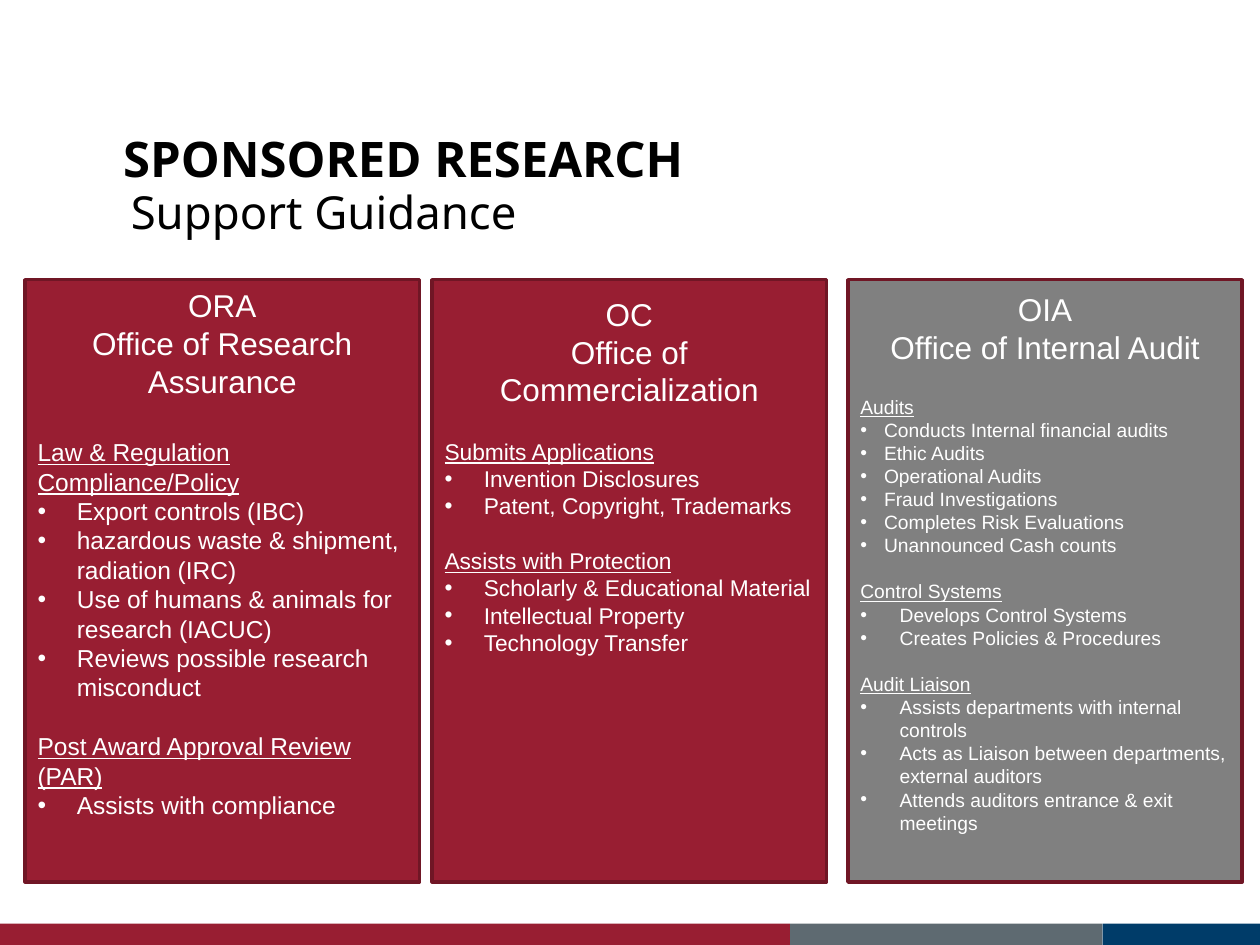
from dataclasses import dataclass

from lxml.etree import SubElement
from pptx import Presentation
from pptx.dml.color import RGBColor as Color
from pptx.enum.shapes import MSO_SHAPE as Preset
from pptx.enum.text import MSO_ANCHOR as Anchor, PP_ALIGN as Align
from pptx.oxml.ns import qn
from pptx.util import Inches, Pt

COLUMN = ROW = Inches(10) // 100


@dataclass(frozen=True)
class Theme:
    """Colours, fonts and type sizes of the slide."""
    crimson: str = "981E32"
    border: str = "701625"
    gray: str = "808080"
    slate: str = "5E6A71"
    navy: str = "003C69"
    black: str = "000000"
    white: str = "FFFFFF"
    heading_font: str = "Noto Sans"
    body_font: str = "Arial"
    title_size: int = 28
    subtitle_size: int = 26
    header_size: int = 18
    leading: float = 1.2


@dataclass(frozen=True)
class Box:
    """A rectangle in columns and rows of the slide grid."""
    left: float
    top: float
    width: float
    height: float

    def lengths(self):
        """Return the rectangle in slide lengths."""
        return (round(self.left * COLUMN), round(self.top * ROW),
                round(self.width * COLUMN), round(self.height * ROW))


@dataclass(frozen=True)
class Office:
    """Content and type settings of one office panel."""
    header: tuple
    sections: tuple
    fill: str
    size: int
    inset: float
    gap: int


THEME = Theme()
WIDE, NARROW = 3.12, 1.88

OFFICES = (
    Office(("ORA", "Office of Research Assurance"), (
        ("Law & Regulation Compliance/Policy", WIDE, (
            "Export controls (IBC)",
            "hazardous waste & shipment, radiation (IRC)",
            "Use of humans & animals for research (IACUC)",
            "Reviews possible research misconduct")),
        ("Post Award Approval Review (PAR)", WIDE, ("Assists with compliance",)),
    ), THEME.crimson, 14, 0.5, 18),
    Office(("OC", "Office of Commercialization"), (
        ("Submits Applications", WIDE, (
            "Invention Disclosures",
            "Patent, Copyright, Trademarks")),
        ("Assists with Protection", WIDE, (
            "Scholarly & Educational Material",
            "Intellectual Property",
            "Technology Transfer")),
    ), THEME.crimson, 13, 1.2, 14),
    Office(("OIA", "Office of Internal Audit"), (
        ("Audits", NARROW, (
            "Conducts Internal financial audits",
            "Ethic Audits",
            "Operational Audits",
            "Fraud Investigations",
            "Completes Risk Evaluations",
            "Unannounced Cash counts")),
        ("Control Systems", WIDE, (
            "Develops Control Systems",
            "Creates Policies & Procedures")),
        ("Audit Liaison", WIDE, (
            "Assists departments with internal controls",
            "Acts as Liaison between departments, external auditors",
            "Attends auditors entrance & exit meetings")),
    ), THEME.gray, 11, 0.8, 14),
)


def add_run(paragraph, text, size, font, color, bold=False, underline=False):
    """Add one styled run to a paragraph."""
    run = paragraph.add_run()
    run.text = text
    run.font.size, run.font.name = Pt(size), font
    run.font.bold, run.font.underline = bold, underline
    run.font.color.rgb = Color.from_string(color)


def add_rectangle(slide, box, fill):
    """Add a flat, borderless rectangle."""
    shape = slide.shapes.add_shape(Preset.RECTANGLE, *box.lengths())
    shape.shadow.inherit = False
    shape.fill.solid()
    shape.fill.fore_color.rgb = Color.from_string(fill)
    shape.line.fill.background()
    return shape


def indent(paragraph, columns, bullet=False):
    """Indent a paragraph, hanging a bullet in the indent if wanted."""
    properties = paragraph._p.get_or_add_pPr()
    length = round(columns * COLUMN)
    properties.set("marL", str(length))
    if bullet:
        properties.set("indent", str(-length))
        SubElement(properties, qn("a:buFont"), typeface=THEME.body_font)
        SubElement(properties, qn("a:buChar"), char="•")


def add_footer(slide, box):
    """Place the three-colour band along the box."""
    left = box.left
    for share, fill in ((0.627, THEME.crimson), (0.248, THEME.slate), (0.125, THEME.navy)):
        width = share * box.width
        add_rectangle(slide, Box(left, box.top, width, box.height), fill)
        left += width


def add_heading(slide, box):
    """Place the title in the upper part of the box and the subtitle below it."""
    title_box = Box(box.left + 1.2, box.top, box.width, 5.3)
    subtitle_box = Box(box.left, box.top + 4.2, box.width, box.height - 4.2)
    lines = (
        (title_box, "SPONSORED RESEARCH", THEME.title_size, True, Anchor.BOTTOM, 0.9, 0),
        (subtitle_box, "Support Guidance", THEME.subtitle_size, False, Anchor.TOP, 1.0, 1.8),
    )
    for place, text, size, bold, anchor, spacing, margin in lines:
        frame = slide.shapes.add_textbox(*place.lengths()).text_frame
        frame.word_wrap, frame.vertical_anchor = True, anchor
        frame.margin_bottom = round(0.3 * ROW)
        paragraph = frame.paragraphs[0]
        paragraph.line_spacing = spacing
        indent(paragraph, margin)
        add_run(paragraph, text, size, THEME.heading_font, THEME.black, bold)


def add_office(slide, box, office):
    """Place one office panel with its header and bulleted sections."""
    shape = add_rectangle(slide, box, office.fill)
    shape.line.color.rgb = Color.from_string(THEME.border)
    shape.line.width = Pt(2)
    frame = shape.text_frame
    frame.word_wrap, frame.vertical_anchor = True, Anchor.TOP
    frame.margin_top = round(office.inset * ROW)
    unused = [frame.paragraphs[0]]

    def add_line(text, size, align=Align.LEFT, before=0, underline=False):
        """Add one paragraph with fixed leading."""
        paragraph = unused.pop() if unused else frame.add_paragraph()
        paragraph.alignment = align
        paragraph.line_spacing = Pt(THEME.leading * size)
        paragraph.space_before = Pt(THEME.leading * before)
        add_run(paragraph, text, size, THEME.body_font, THEME.white, underline=underline)
        return paragraph

    for text in office.header:
        add_line(text, THEME.header_size, Align.CENTER)
    for number, (heading, hanging, items) in enumerate(office.sections):
        before = office.size if number else office.gap
        add_line(heading, office.size, before=before, underline=True)
        for item in items:
            indent(add_line(item, office.size), hanging, bullet=True)


def main():
    """Build and save the slide."""
    presentation = Presentation()
    presentation.slide_width, presentation.slide_height = 100 * COLUMN, 75 * ROW
    slide = presentation.slides.add_slide(presentation.slide_layouts[6])
    add_footer(slide, Box(0, 73.3, 100, 1.7))
    add_heading(slide, Box(7.6, 9.9, 85, 15.6))
    for left, office in zip((2, 34.3, 67.3), OFFICES):
        add_office(slide, Box(left, 22.2, 31.3, 47.8), office)
    presentation.save("out.pptx")


if __name__ == "__main__":
    main()
